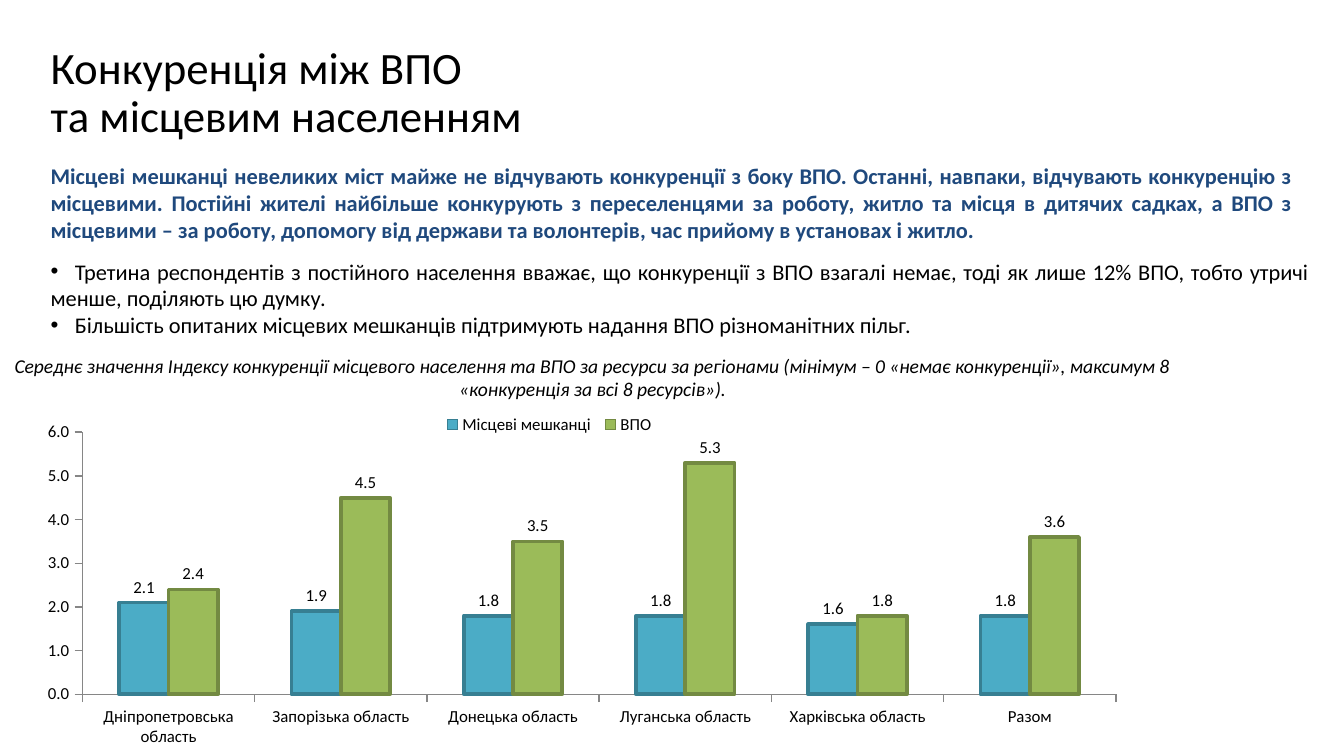
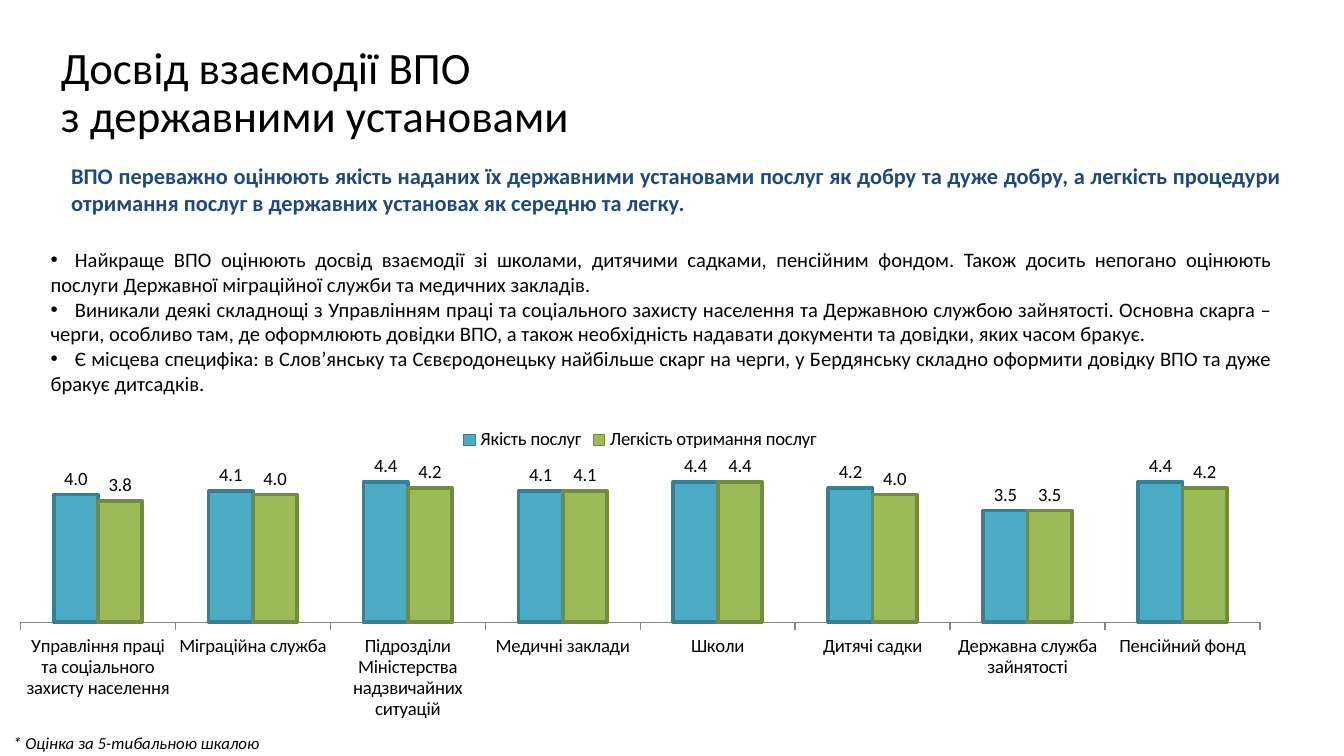
"""Build two slides on how displaced people (ВПО) compete with locals and rate state services."""
from lxml import etree
from pptx import Presentation
from pptx.chart.data import CategoryChartData
from pptx.dml.color import RGBColor
from pptx.enum.chart import XL_CHART_TYPE as ChartType, XL_LABEL_POSITION as LabelPosition
from pptx.enum.chart import XL_LEGEND_POSITION as LegendPosition, XL_TICK_MARK as TickMark
from pptx.enum.text import PP_ALIGN as Align, MSO_ANCHOR as Anchor
from pptx.oxml.ns import qn
from pptx.util import Pt

COLORS = {"text": "000000", "lead": "1F497D", "axis": "868686"}
SERIES_STYLES = [("4BACC6", "377F92"), ("9BBB59", "738A42")]
FONT = "Calibri"
STYLES = {
    "title": {"size": Pt(24), "color": "text", "align": Align.LEFT, "spacing": 0.9},
    "lead": {"size": Pt(12), "color": "lead", "align": Align.JUSTIFY, "bold": True},
    "bullets": {"size": Pt(12), "color": "text", "align": Align.JUSTIFY, "bullet": True},
    "small bullets": {"size": Pt(11), "color": "text", "align": Align.JUSTIFY, "bullet": True},
    "caption": {"size": Pt(10.5), "color": "text", "align": Align.CENTER, "italic": True},
    "footnote": {"size": Pt(9), "color": "text", "align": Align.LEFT, "italic": True, "wrap": False},
}
PAGES = [
    {
        "chart": {
            "place": (14.4, 201, 595.4, 203.6),
            "size": 9,
            "top": 6,
            "show_axis": True,
            "plot": (0.05, 0.15, 0.93, 0.69),
            "legend": (0.37, 0.1, 0.2, 0.06),
            "categories": ["Дніпропетровська область", "Запорізька область", "Донецька область",
                           "Луганська область", "Харківська область", "Разом"],
            "series": {"Місцеві мешканці": [2.1, 1.9, 1.8, 1.8, 1.6, 1.8],
                       "ВПО": [2.4, 4.5, 3.5, 5.3, 1.8, 3.6]},
        },
        "texts": [
            ("title", (20, 21, 675, 41), ["Конкуренція між ВПО\vта місцевим населенням"]),
            ("caption", (0, 186, 635, 32), [
                "Середнє значення Індексу конкуренції місцевого населення та ВПО за ресурси за регіонами "
                "(мінімум – 0 «немає конкуренції», максимум 8 «конкуренція за всі 8 ресурсів»)."]),
            ("lead", (20, 83.5, 680, 51), [
                "Місцеві мешканці невеликих міст майже не відчувають конкуренції з боку ВПО. Останні, "
                "навпаки, відчувають конкуренцію з місцевими. Постійні жителі найбільше конкурують з "
                "переселенцями за роботу, житло та місця в дитячих садках, а ВПО з місцевими – за роботу, "
                "допомогу від держави та волонтерів, час прийому в установах і житло."]),
            ("bullets", (20, 134.5, 689, 51), [
                "Третина респондентів з постійного населення вважає, що конкуренції з ВПО взагалі немає, "
                "тоді як лише 12% ВПО, тобто утричі менше, поділяють цю думку.",
                "Більшість опитаних місцевих мешканців підтримують надання ВПО різноманітних пільг."]),
        ],
    },
    {
        "chart": {
            "place": (0, 221.8, 686, 183.4),
            "size": 10,
            "top": 5,
            "show_axis": False,
            "plot": (0.016, 0.142, 0.968, 0.467),
            "legend": None,
            "categories": ["Управління праці та соціального захисту населення", "Міграційна служба",
                           "Підрозділи Міністерства надзвичайних ситуацій", "Медичні заклади", "Школи",
                           "Дитячі садки", "Державна служба зайнятості", "Пенсійний фонд"],
            "series": {"Якість послуг": [4, 4.1, 4.4, 4.1, 4.4, 4.2, 3.5, 4.4],
                       "Легкість отримання послуг": [3.8, 4, 4.2, 4.1, 4.4, 4, 3.5, 4.2]},
        },
        "texts": [
            ("title", (25.5, 21, 672, 42.5), ["Досвід взаємодії ВПО\vз державними установами"]),
            ("small bullets", (20, 129, 669, 87), [
                "Найкраще ВПО оцінюють досвід взаємодії зі школами, дитячими садками, пенсійним фондом. "
                "Також досить непогано оцінюють послуги Державної міграційної служби та медичних закладів.",
                "Виникали деякі складнощі з Управлінням праці та соціального захисту населення та Державною "
                "службою зайнятості. Основна скарга – черги, особливо там, де оформлюють довідки ВПО, а також "
                "необхідність надавати документи та довідки, яких часом бракує.",
                "Є місцева специфіка: в Слов’янську та Сєвєродонецьку найбільше скарг на черги, у Бердянську "
                "складно оформити довідку ВПО та дуже бракує дитсадків."]),
            ("lead", (31, 83.5, 663, 35), [
                "ВПО переважно оцінюють якість наданих їх державними установами послуг як добру та дуже "
                "добру, а легкість процедури отримання послуг в державних установах як середню та легку."]),
            ("footnote", (0, 389, 148, 18), ["* Оцінка за 5-тибальною шкалою"]),
        ],
    },
]


def add_text(page, style_name, place, lines):
    style = STYLES[style_name]
    frame = page.shapes.add_textbox(*map(Pt, place)).text_frame
    frame.word_wrap = style.get("wrap", True)
    frame.vertical_anchor = Anchor.TOP
    for number, line in enumerate(lines):
        para = frame.add_paragraph() if number else frame.paragraphs[0]
        para.alignment = style["align"]
        para.line_spacing = style.get("spacing")
        if "bullet" in style:
            props = para._p.get_or_add_pPr()
            props.set("marL", "0")
            props.set("indent", "0")
            etree.SubElement(props, qn("a:buFont")).set("typeface", "Arial")
            etree.SubElement(props, qn("a:buChar")).set("char", "•")
            stops = etree.SubElement(props, qn("a:tabLst"))
            stop = etree.SubElement(stops, qn("a:tab"))
            stop.set("pos", str(Pt(13)))
            stop.set("algn", "l")
            line = "\t" + line
        para.text = line
        for span in para.runs:
            span.font.name = FONT
            span.font.color.rgb = RGBColor.from_string(COLORS[style["color"]])
            for name in ("size", "bold", "italic"):
                setattr(span.font, name, style.get(name))


def set_layout(parent, index, place, inner=False):
    for old in parent.findall(qn("c:layout")):
        parent.remove(old)
    layout = etree.Element(qn("c:layout"))
    manual = etree.SubElement(layout, qn("c:manualLayout"))
    values = [("layoutTarget", "inner")] if inner else []
    values += [("xMode", "edge"), ("yMode", "edge"), *zip("xywh", place)]
    for name, value in values:
        etree.SubElement(manual, qn(f"c:{name}")).set("val", str(value))
    parent.insert(index, layout)


deck = Presentation()
deck.slide_width, deck.slide_height = Pt(720), Pt(405)

for content in PAGES:
    page = deck.slides.add_slide(deck.slide_layouts[6])
    add_text(page, *content["texts"][0])

    details = content["chart"]
    data = CategoryChartData(number_format="0.0")
    data.categories = details["categories"]
    for name, values in details["series"].items():
        data.add_series(name, values)
    chart = page.shapes.add_chart(ChartType.COLUMN_CLUSTERED, *map(Pt, details["place"]), data).chart
    chart.has_title = False
    chart.font.name = FONT
    chart.font.size = Pt(details["size"])
    chart.font.color.rgb = RGBColor.from_string(COLORS["text"])

    chart.has_legend = True
    chart.legend.position = LegendPosition.TOP
    chart.legend.include_in_layout = False
    if details["legend"]:
        set_layout(chart.legend._element, 1, details["legend"])
    set_layout(chart._chartSpace.xpath("c:chart/c:plotArea")[0], 0, details["plot"], inner=True)

    for axis in (chart.category_axis, chart.value_axis):
        axis.has_major_gridlines = False
        axis.major_tick_mark = TickMark.OUTSIDE
        axis.format.line.color.rgb = RGBColor.from_string(COLORS["axis"])
        axis.format.line.width = Pt(0.75)
    scale = chart.value_axis
    scale.minimum_scale, scale.maximum_scale, scale.major_unit = 0, details["top"], 1
    scale.tick_labels.number_format = "0.0"
    scale.tick_labels.number_format_is_linked = False
    scale.visible = details["show_axis"]

    plot = chart.plots[0]
    plot.vary_by_categories = False
    plot.gap_width, plot.overlap = 150, 0
    for series, (fill, edge) in zip(plot.series, SERIES_STYLES):
        series.format.fill.solid()
        series.format.fill.fore_color.rgb = RGBColor.from_string(fill)
        series.format.line.color.rgb = RGBColor.from_string(edge)
        series.format.line.width = Pt(2)
        labels = series.data_labels
        labels.show_value = True
        labels.number_format = "0.0"
        labels.number_format_is_linked = False
        labels.position = LabelPosition.OUTSIDE_END

    for text in content["texts"][1:]:
        add_text(page, *text)

deck.save("out.pptx")
